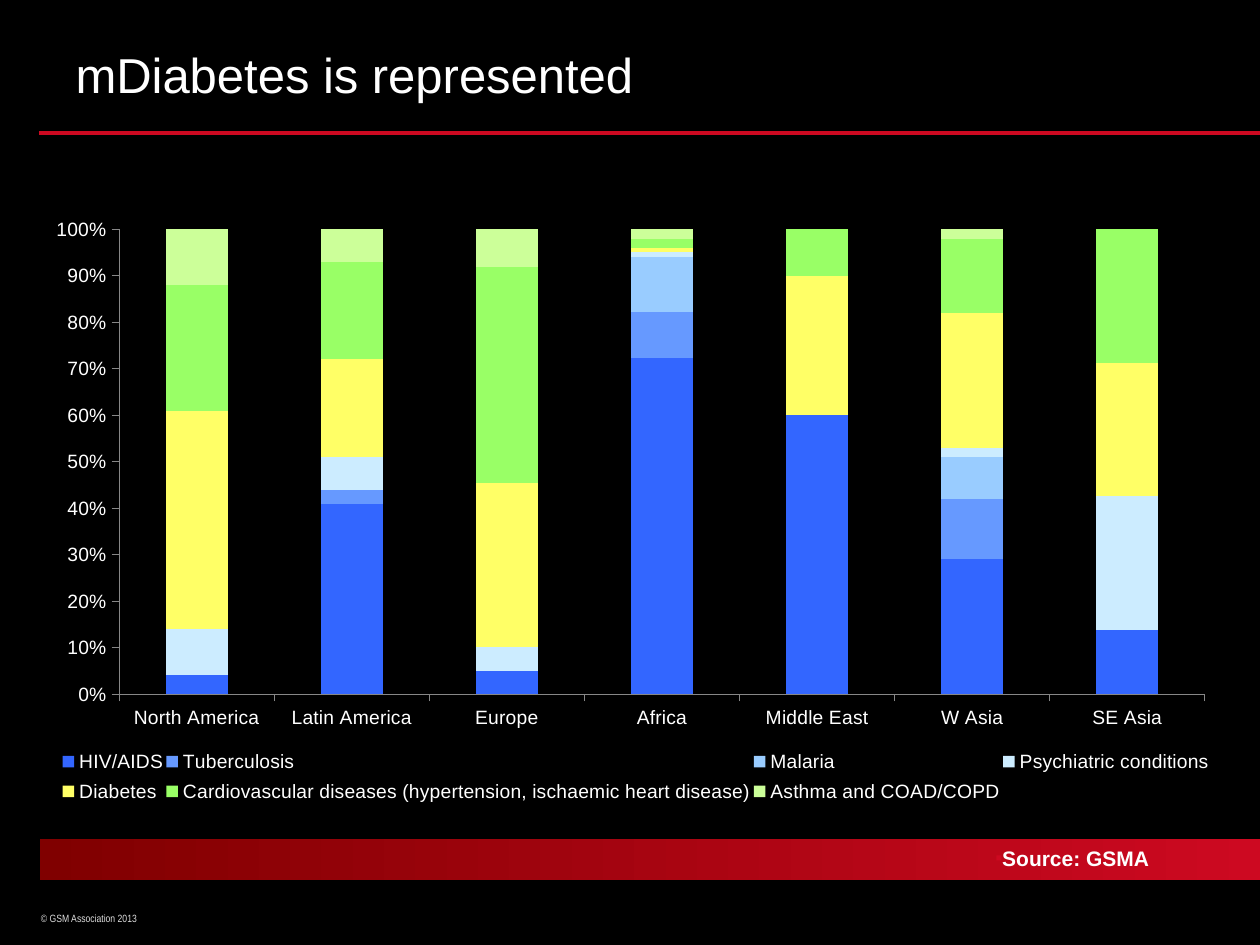
"""Build the slide on the share of mHealth services by disease and region."""
from lxml.etree import SubElement
from pptx import Presentation
from pptx.chart.data import CategoryChartData
from pptx.dml.color import RGBColor
from pptx.enum.chart import XL_CHART_TYPE, XL_LEGEND_POSITION, XL_TICK_MARK
from pptx.enum.shapes import MSO_CONNECTOR, MSO_SHAPE
from pptx.enum.text import MSO_ANCHOR, PP_ALIGN
from pptx.oxml.ns import qn
from pptx.util import Emu, Pt

SCALE = 914400 / 126
HUES = {
    "black": "000000", "white": "FFFFFF", "pale": "DDDDDD", "gray": "878787",
    "dark": "800000", "red": "CD0921",
    "blue": "3366FF", "mid": "6699FF", "sky": "99CCFF", "ice": "CCECFF",
    "yellow": "FFFF66", "green": "99FF66", "lime": "CCFF99",
}
PLACES = ["North America", "Latin America", "Europe", "Africa",
          "Middle East", "W Asia", "SE Asia"]
SERIES = [
    ("HIV/AIDS", "blue", (4, 41, 5, 73, 60, 29, 14)),
    ("Tuberculosis", "mid", (0, 3, 0, 10, 0, 13, 0)),
    ("Malaria", "sky", (0, 0, 0, 12, 0, 9, 0)),
    ("Psychiatric conditions", "ice", (10, 7, 5, 1, 0, 2, 29)),
    ("Diabetes", "yellow", (47, 21, 35, 1, 30, 29, 29)),
    ("Cardiovascular diseases (hypertension, ischaemic heart disease)",
     "green", (27, 21, 46, 2, 10, 16, 29)),
    ("Asthma and COAD/COPD", "lime", (12, 7, 8, 2, 0, 2, 0)),
]
PLOT = {"x": 0.07, "y": 0.032, "w": 0.914, "h": 0.767}
KEY = {"x": 0.02, "y": 0.88, "w": 0.97, "h": 0.11}


def px(*sizes):
    return [Emu(round(size * SCALE)) for size in sizes]


def hue(name):
    return RGBColor.from_string(HUES[name])


def style(font, size=11, face="Arial", color="white", bold=False):
    font.size, font.name, font.bold = Pt(size), face, bold
    font.color.rgb = hue(color)


def mark(line, color, size, sign):
    props = line._p.get_or_add_pPr()
    props.set("marL", "0")
    props.set("indent", "0")
    tint = SubElement(props, qn("a:buClr"))
    SubElement(tint, qn("a:srgbClr")).set("val", HUES[color])
    SubElement(props, qn("a:buSzPct")).set("val", str(size * 1000))
    SubElement(props, qn("a:buFont")).set("typeface", "Arial")
    SubElement(props, qn("a:buChar")).set("char", sign)


def write(frame, text, anchor=MSO_ANCHOR.TOP, bullet=None, **look):
    frame.word_wrap = True
    frame.vertical_anchor = anchor
    line = frame.paragraphs[0]
    line.alignment = PP_ALIGN.LEFT
    if bullet:
        mark(line, *bullet)
    run = line.add_run()
    run.text = text
    style(run.font, **look)


def lay(parent, spot, rules):
    for old in parent.findall(qn("c:layout")):
        parent.remove(old)
    frame = SubElement(parent, qn("c:layout"))
    parent.insert(spot, frame)
    inner = SubElement(frame, qn("c:manualLayout"))
    for tag, value in rules.items():
        SubElement(inner, qn(f"c:{tag}")).set("val", str(value))


class Board:
    """Hold the current slide and draw each kind of element on it."""

    def __init__(self, slide):
        self.slide = slide
        self.shapes = slide.shapes
        fill = slide.background.fill
        fill.solid()
        fill.fore_color.rgb = hue("black")

    def title(self, text, *box):
        shape = self.shapes.title
        shape.left, shape.top, shape.width, shape.height = px(*box)
        write(shape.text_frame, text, MSO_ANCHOR.MIDDLE, size=28)

    def text(self, text, *box, inset=13, **look):
        frame = self.shapes.add_textbox(*px(*box)).text_frame
        frame.margin_left, = px(inset)
        write(frame, text, **look)

    def band(self, first, last, *box):
        shape = self.shapes.add_shape(MSO_SHAPE.RECTANGLE, *px(*box))
        shape.shadow.inherit = False
        shape.line.fill.background()
        shape.fill.gradient()
        shape.fill.gradient_angle = 0
        for stop, name, place in zip(shape.fill.gradient_stops, (first, last), (0, 1)):
            stop.color.rgb = hue(name)
            stop.position = place

    def rule(self, color, width, *ends):
        line = self.shapes.add_connector(MSO_CONNECTOR.STRAIGHT, *px(*ends))
        line.line.color.rgb = hue(color)
        line.line.width = Pt(width)
        SubElement(line._element.spPr, qn("a:effectLst"))

    def chart(self, places, series, *box):
        data = CategoryChartData()
        data.categories = places
        for name, _, values in series:
            data.add_series(name, values)
        kind = XL_CHART_TYPE.COLUMN_STACKED_100
        chart = self.shapes.add_chart(kind, *px(*box), data).chart
        style(chart.font)
        chart.has_title = False
        chart.has_legend = True
        chart.legend.position = XL_LEGEND_POSITION.BOTTOM
        chart.legend.include_in_layout = False
        plot = chart.plots[0]
        plot.gap_width, plot.overlap = 150, 100
        plot.vary_by_categories = False
        for part, (_, color, _) in zip(plot.series, series):
            part.format.fill.solid()
            part.format.fill.fore_color.rgb = hue(color)
        for axis in (chart.category_axis, chart.value_axis):
            axis.has_major_gridlines = False
            axis.major_tick_mark = XL_TICK_MARK.OUTSIDE
            axis.minor_tick_mark = XL_TICK_MARK.NONE
            axis.format.line.color.rgb = hue("gray")
            axis.format.line.width = Pt(0.5)
        scale = chart.value_axis
        scale.minimum_scale, scale.maximum_scale, scale.major_unit = 0, 1, 0.1
        scale.tick_labels.number_format = "0%"
        scale.tick_labels.number_format_is_linked = False
        edge = {"xMode": "edge", "yMode": "edge"}
        lay(chart._chartSpace.chart.plotArea, 0,
            {"layoutTarget": "inner", **edge, **PLOT})
        lay(chart.legend._element, 1, {**edge, **KEY})


def main():
    deck = Presentation()
    deck.slide_width, deck.slide_height = px(1260, 945)
    board = Board(deck.slides.add_slide(deck.slide_layouts[5]))
    board.text("© GSM Association 2013", 40, 906, 197, 25, inset=1,
               size=6, face="Arial Narrow", color="pale")
    board.band("dark", "red", 40, 839, 1220, 41)
    board.rule("red", 2.25, 39, 133, 1260, 133)
    board.title("mDiabetes is represented", 63, 26, 1134, 96)
    board.chart(PLACES, SERIES, 36, 210, 1188, 606)
    board.text("Source: GSMA", 983, 839, 250, 38,
               bullet=("red", 50, "■"), size=12, bold=True)
    deck.save("out.pptx")


if __name__ == "__main__":
    main()
